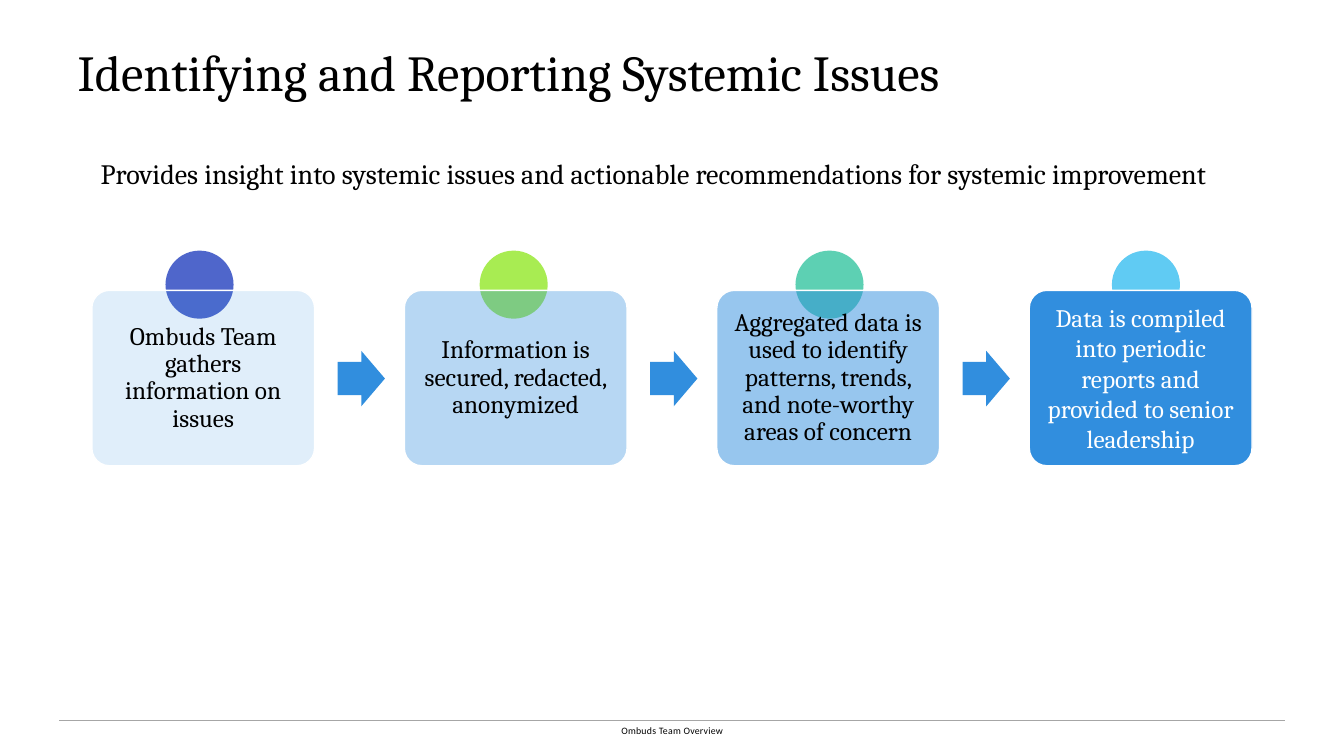
from lxml.etree import SubElement
from pptx import Presentation
from pptx.dml.color import RGBColor
from pptx.enum.shapes import MSO_CONNECTOR, MSO_SHAPE
from pptx.enum.text import MSO_ANCHOR, MSO_AUTO_SIZE, PP_ALIGN
from pptx.oxml.ns import qn
from pptx.util import Pt

BLACK = RGBColor(0x00, 0x00, 0x00)
WHITE = RGBColor(0xFF, 0xFF, 0xFF)
GRAY = RGBColor(0xA6, 0xA6, 0xA6)
BLUE = RGBColor(0x31, 0x8E, 0xDE)
INDIGO = RGBColor(0x4F, 0x66, 0xCB)
LIME = RGBColor(0xA8, 0xEC, 0x52)
TEAL = RGBColor(0x5D, 0xD0, 0xB3)
SKY = RGBColor(0x60, 0xCB, 0xF3)

STEPS = [
    ("Ombuds Team gathers information on issues", 15, BLACK, 0.9, INDIGO, 118.2),
    ("Information is secured, redacted, anonymized", 35, BLACK, 0.9, LIME, 342.6),
    ("Aggregated data is used to identify patterns, trends, "
     "and note-worthy areas of concern", 50, BLACK, 0.9, TEAL, 568.2),
    ("Data is compiled into periodic reports and provided to senior leadership",
     100, WHITE, 1.0, SKY, 794.2),
]
LEFT, STEP = 65.6, 223.2


def write(frame, text, size=18, font="Cambria", color=BLACK, align=PP_ALIGN.LEFT,
          anchor=MSO_ANCHOR.TOP, inset=(7.2, 3.6), line=1.0, level=0, after=0, track=0):
    frame.word_wrap = True
    frame.auto_size = MSO_AUTO_SIZE.NONE
    frame.vertical_anchor = anchor
    frame.margin_left = frame.margin_right = Pt(inset[0])
    frame.margin_top = frame.margin_bottom = Pt(inset[1])
    para = frame.paragraphs[0]
    para.alignment = align
    para.line_spacing = line
    para.level = level
    para.space_before = Pt(0)
    para.space_after = Pt(after)
    run = para.add_run()
    run.text = text
    run.font.size = Pt(size)
    run.font.name = font
    run.font.color.rgb = color
    if track:
        run.font._element.set("spc", str(track))


class Deck:
    def __init__(self):
        self.file = Presentation()
        self.file.slide_width = Pt(960)
        self.file.slide_height = Pt(540)
        self.slide = self.file.slides.add_slide(self.file.slide_layouts[5])
        self.shapes = self.slide.shapes

    def title(self, text, x, y, w, h, **style):
        box = self.shapes.title
        box.left, box.top, box.width, box.height = Pt(x), Pt(y), Pt(w), Pt(h)
        write(box.text_frame, text, **style)

    def text(self, text, x, y, w, h, **style):
        box = self.shapes.add_textbox(Pt(x), Pt(y), Pt(w), Pt(h))
        write(box.text_frame, text, **style)

    def shape(self, kind, x, y, w, h, fill, adjust=(), alpha=100, edge=None):
        item = self.shapes.add_shape(kind, Pt(x), Pt(y), Pt(w), Pt(h))
        item.shadow.inherit = False
        for spot, value in enumerate(adjust):
            item.adjustments[spot] = value
        item.fill.solid()
        item.fill.fore_color.rgb = fill
        if alpha < 100:
            tint = item._element.spPr.find(qn("a:solidFill")).find(qn("a:srgbClr"))
            SubElement(tint, qn("a:alpha")).set("val", str(alpha * 1000))
        if edge is None:
            item.line.fill.background()
        else:
            item.line.color.rgb = edge
            item.line.width = Pt(1)
        return item

    def rule(self, x, y, end, color, width):
        line = self.shapes.add_connector(
            MSO_CONNECTOR.STRAIGHT, Pt(x), Pt(y), Pt(end), Pt(y))
        line.line.color.rgb = color
        line.line.width = Pt(width)
        SubElement(line._element.spPr, qn("a:effectLst"))

    def card(self, x, text, alpha, color, line):
        card = self.shape(MSO_SHAPE.ROUNDED_RECTANGLE, x, 207.4, 159.1, 125.3,
                          BLUE, (0.1,), alpha, WHITE)
        write(card.text_frame, text, color=color, line=line, inset=(5, 5),
              align=PP_ALIGN.CENTER, anchor=MSO_ANCHOR.MIDDLE)

    def arrow(self, x):
        self.shape(MSO_SHAPE.RIGHT_ARROW, x, 250.6, 33.8, 39.6, BLUE, (0.6, 0.5))

    def disc(self, x, fill):
        self.shape(MSO_SHAPE.OVAL, x, 179, 48.6, 48.6, fill)


def main():
    deck = Deck()
    deck.rule(42.5, 514.8, 918, GRAY, 0.5)
    deck.text("Ombuds Team Overview", 318.2, 517.7, 324, 8.6, size=7,
              font="Calibri", align=PP_ALIGN.CENTER, anchor=MSO_ANCHOR.MIDDLE,
              inset=(0, 0), track=20)
    deck.title("Identifying and Reporting Systemic Issues", 48.2, 46.1, 875.5, 28.8,
               size=36, line=Pt(23))
    deck.text("Provides insight into systemic issues and actionable recommendations "
              "for systemic improvement", 28.8, 108, 902.9, 400, size=20,
              level=1, after=12)
    for spot, (text, alpha, color, line, fill, x) in enumerate(STEPS):
        left = LEFT + spot * STEP
        deck.disc(x, fill)
        deck.card(left, text, alpha, color, line)
        if spot < len(STEPS) - 1:
            deck.arrow(left + 175.6)
    deck.file.save("out.pptx")


if __name__ == "__main__":
    main()
